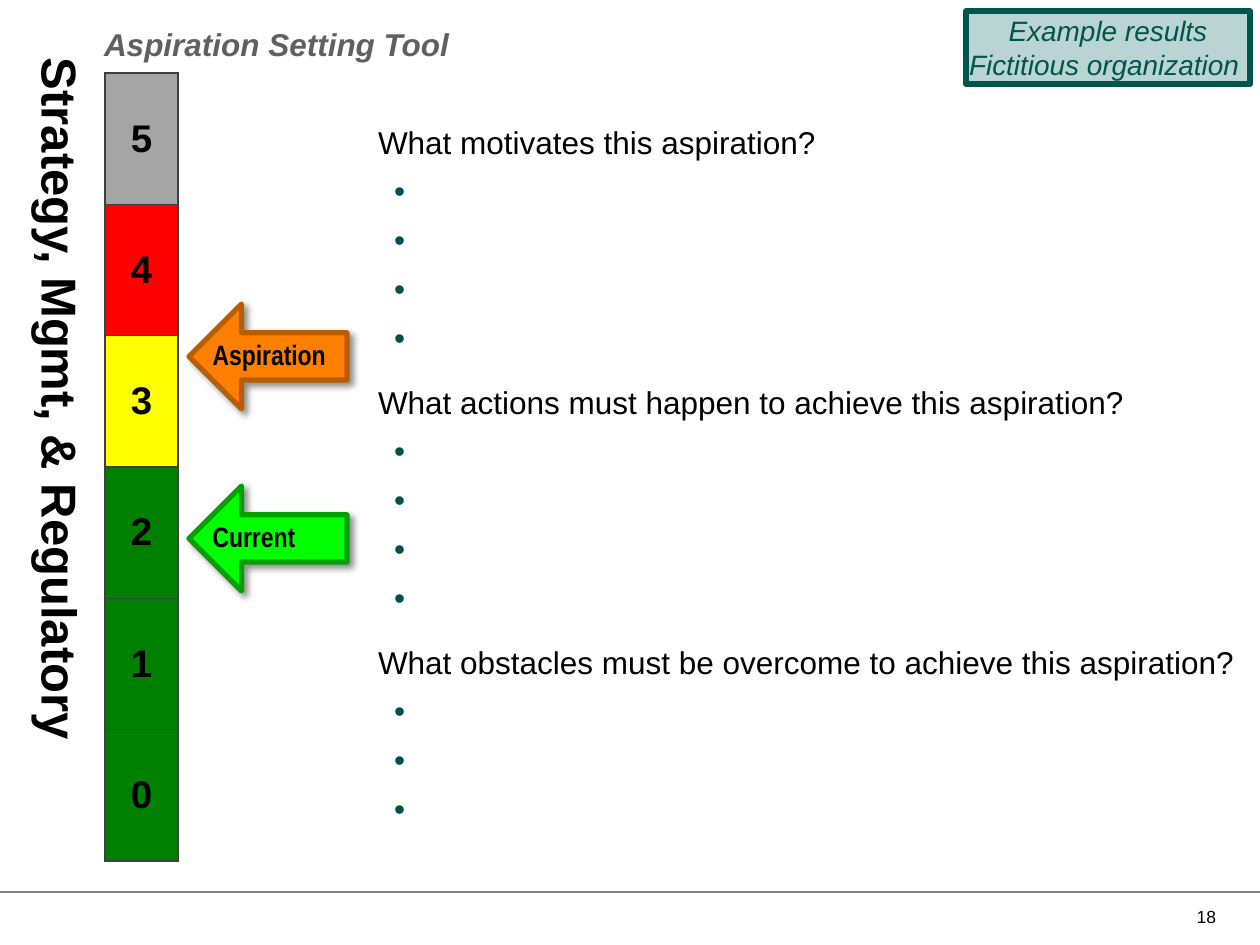
from lxml import etree
from pptx import Presentation
from pptx.dml.color import RGBColor
from pptx.enum.shapes import MSO_CONNECTOR, MSO_SHAPE
from pptx.enum.text import MSO_ANCHOR, MSO_AUTO_SIZE, PP_ALIGN
from pptx.oxml import parse_xml
from pptx.oxml.ns import nsdecls, qn
from pptx.util import Emu, Pt

LEFT, CENTER, RIGHT = PP_ALIGN.LEFT, PP_ALIGN.CENTER, PP_ALIGN.RIGHT
TOP, MIDDLE, BOTTOM = MSO_ANCHOR.TOP, MSO_ANCHOR.MIDDLE, MSO_ANCHOR.BOTTOM

# Content
COLORS = {
    "black": "000000", "heading": "606060", "rule": "808080", "border": "404040",
    "bullet": "00514E", "teal": "00554D", "pale teal": "B9D4D3",
    "gray": "A5A5A5", "red": "FF0000", "yellow": "FFFF00", "green": "008000",
    "orange": "FF8000", "dark orange": "B95D00", "lime": "00FF00", "dark lime": "00A101",
}
TITLE = "Strategy, Mgmt, & Regulatory"
HEADING = "Aspiration Setting Tool"
STICKER = "Example results\vFictitious organization "
PAGE_NUMBER = "18"
LEVELS = [("5", "gray"), ("4", "red"), ("3", "yellow"),
          ("2", "green"), ("1", "green"), ("0", "green")]
MARKERS = [("Aspiration", 304, "orange", "dark orange"),
           ("Current", 486, "lime", "dark lime")]
QUESTIONS = [("What motivates this aspiration?", 4),
             ("What actions must happen to achieve this aspiration?", 4),
             ("What obstacles must be overcome to achieve this aspiration?", 3)]


def px(count):
    return Emu(round(count * 914400 / 126))


def rgb(name):
    return RGBColor.from_string(COLORS[name])


def place(shape, left, top, width, height):
    shape.left, shape.top, shape.width, shape.height = map(px, (left, top, width, height))


def setup_frame(frame, anchor=TOP, wrap=True, inset=0):
    frame.auto_size = MSO_AUTO_SIZE.NONE
    frame.word_wrap = wrap
    frame.vertical_anchor = anchor
    frame.margin_left = frame.margin_right = px(inset)
    frame.margin_top = frame.margin_bottom = px(inset / 2)


def write(para, text, size=18, font="Arial", color="black", bold=False, italic=False,
          align=LEFT, spacing=1.0, before=0, after=0, bullet=None, margin=0, indent=0):
    para.text = text
    para.alignment = align
    para.line_spacing = spacing
    para.space_before, para.space_after = Pt(before), Pt(after)
    props = para._p.get_or_add_pPr()
    props.set("marL", str(px(margin)))
    props.set("indent", str(px(indent)))
    if bullet:
        etree.SubElement(props, qn("a:buChar")).set("char", bullet)
    else:
        etree.SubElement(props, qn("a:buNone"))
    for span in para.runs:
        span.font.size, span.font.name = Pt(size), font
        span.font.bold, span.font.italic = bold, italic
        span.font.color.rgb = rgb(color)


def add_block(page, kind, bounds, fill, line):
    shape = page.shapes.add_shape(kind, *map(px, bounds))
    shape.shadow.inherit = False
    shape.fill.solid()
    shape.fill.fore_color.rgb = rgb(fill)
    shape.line.color.rgb = rgb(line)
    shape.line.width = Pt(3)
    setup_frame(shape.text_frame, MIDDLE, wrap=False)
    return shape


def add_text(page, bounds, text, anchor=TOP, wrap=True, **style):
    box = page.shapes.add_textbox(*map(px, bounds))
    setup_frame(box.text_frame, anchor, wrap, inset=12)
    write(box.text_frame.paragraphs[0], text, **style)


def add_marker(page, label, top, fill, line):
    arrow = add_block(page, MSO_SHAPE.LEFT_ARROW, (189, top, 158, 105), fill, line)
    arrow.adjustments[0], arrow.adjustments[1] = 0.45, 0.5
    effects = arrow._element.spPr.find(qn("a:effectLst"))
    effects.append(parse_xml(
        f'<a:outerShdw {nsdecls("a")} blurRad="{Pt(4)}" dist="{Pt(3)}" dir="2700000" '
        'algn="tl" rotWithShape="0"><a:srgbClr val="000000"><a:alpha val="43000"/>'
        '</a:srgbClr></a:outerShdw>'))
    write(arrow.text_frame.paragraphs[0], label, size=16, font="Arial Narrow",
          bold=True, spacing=0.85)


def add_scale(page):
    height = 788
    frame = page.shapes.add_table(len(LEVELS), 1, px(105), px(73), px(73), px(height))
    table = frame.table
    table.first_row = table.horz_banding = False
    for index, (label, fill) in enumerate(LEVELS):
        table.rows[index].height = px(height / len(LEVELS))
        cell = table.cell(index, 0)
        cell.vertical_anchor = MIDDLE
        write(cell.text_frame.paragraphs[0], label, size=22, bold=True, align=CENTER)
        props = cell._tc.get_or_add_tcPr()
        for side in ("lnL", "lnR", "lnT", "lnB"):
            props.append(parse_xml(
                f'<a:{side} {nsdecls("a")} w="{Pt(1)}"><a:solidFill>'
                f'<a:srgbClr val="{COLORS["border"]}"/></a:solidFill></a:{side}>'))
        cell.fill.solid()
        cell.fill.fore_color.rgb = rgb(fill)


def fill_title(title):
    # A quarter turn about the centre makes the line read downwards
    left, top, width, height = 31, 58, 58, 811
    shift = (height - width) / 2
    place(title, left - shift, top + shift, height, width)
    title.rotation = 90
    setup_frame(title.text_frame, BOTTOM)
    write(title.text_frame.paragraphs[0], TITLE, size=28, bold=True, spacing=0.9)


def fill_body(body):
    place(body, 378, 126, 882, 743)
    frame = body.text_frame
    setup_frame(frame)
    for index, (question, answers) in enumerate(QUESTIONS):
        para = frame.add_paragraph() if index else frame.paragraphs[0]
        write(para, question, spacing=0.95, before=12 if index else 0, after=4)
        for _ in range(answers):
            para = frame.add_paragraph()
            para.level = 1
            write(para, " ", color="bullet", spacing=0.95, before=3, after=4.5,
                  bullet="•", margin=63, indent=-47)


def main():
    deck = Presentation()
    deck.slide_width, deck.slide_height = px(1260), px(945)
    page = deck.slides.add_slide(deck.slide_layouts[1])

    # Footer rule and page number
    rule = page.shapes.add_connector(MSO_CONNECTOR.STRAIGHT, px(0), px(892), px(1260), px(892))
    rule.line.color.rgb = rgb("rule")
    rule.line.width = Pt(1)
    etree.SubElement(rule._element.spPr, qn("a:effectLst"))
    add_text(page, (1081, 898, 147, 38), PAGE_NUMBER, anchor=MIDDLE, size=10, align=RIGHT)

    # Title, questions, heading, scale and markers
    fill_title(page.shapes.title)
    fill_body(page.placeholders[1])
    add_text(page, (92, 19, 374, 50), HEADING, wrap=False, color="heading",
             bold=True, italic=True)
    add_scale(page)
    for marker in MARKERS:
        add_marker(page, *marker)

    # Sticker
    sticker = add_block(page, MSO_SHAPE.ROUNDED_RECTANGLE, (966, 11, 284, 73),
                        "pale teal", "teal")
    sticker.adjustments[0] = 0
    write(sticker.text_frame.paragraphs[0], STICKER, size=16, color="teal",
          italic=True, align=CENTER)

    deck.save("out.pptx")


if __name__ == "__main__":
    main()
